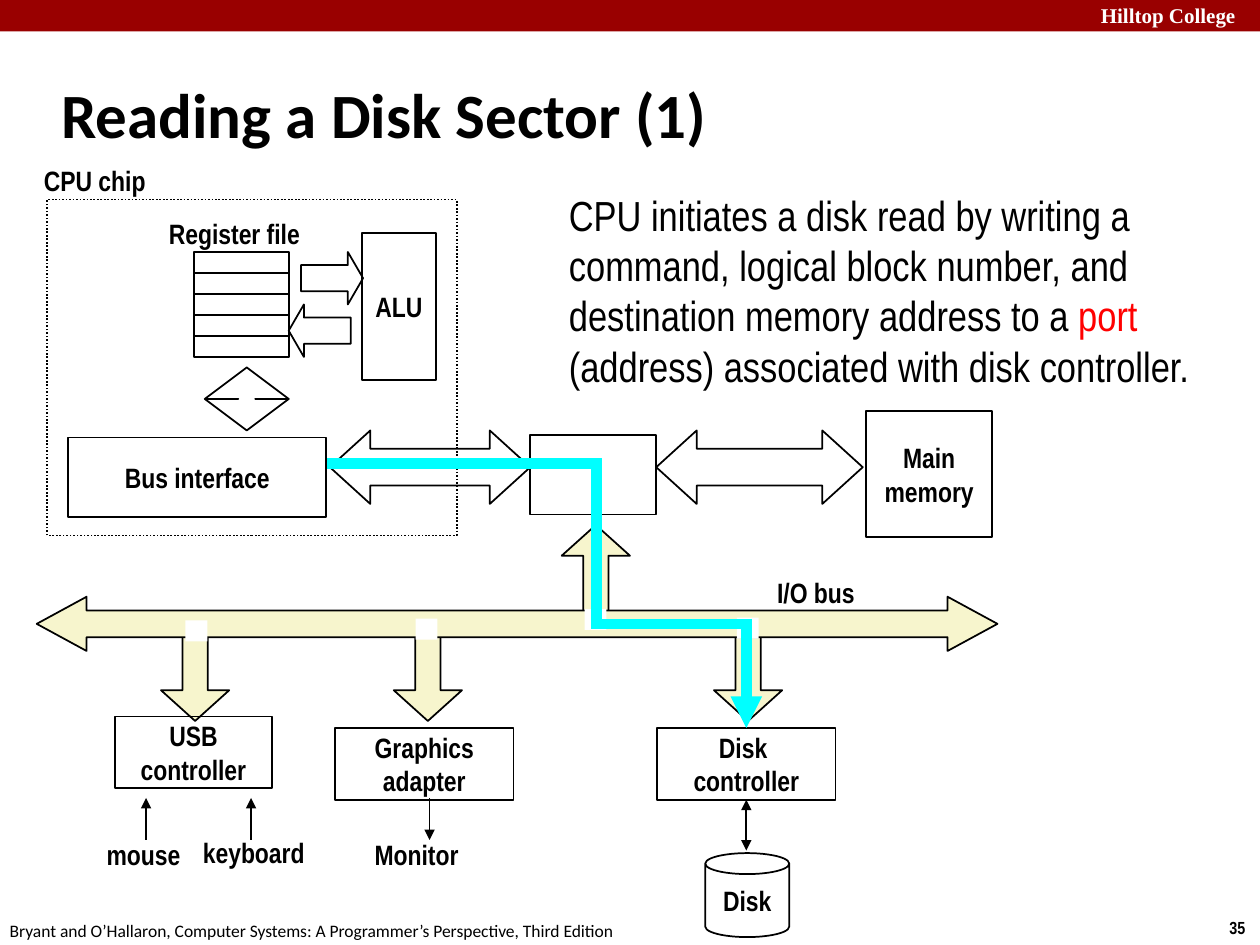
from pptx import Presentation
from pptx import util as u
from pptx.dml.color import RGBColor
from pptx.enum import dml, shapes, text
from pptx.oxml.ns import qn
from lxml import etree

BLACK, WHITE, RED, CYAN = "000000", "FFFFFF", "FF0000", "00FFFF"
HEADER_RED, BUS_CREAM = "990000", "F7F5CD"
KIND = shapes.MSO_SHAPE
LABEL = {"name": "Arial Narrow", "size": u.Pt(16), "bold": True}
CENTER, LEFT = text.PP_ALIGN.CENTER, text.PP_ALIGN.LEFT
MIDDLE, TOP = text.MSO_ANCHOR.MIDDLE, text.MSO_ANCHOR.TOP


def color(hex_value):
    return RGBColor.from_string(hex_value)


def points(*lengths):
    return [u.Pt(length) for length in lengths]


def write(shape, lines, font, align=CENTER, anchor=MIDDLE, wrap=False):
    """Fill a shape with paragraphs, each a list of (words, colour) runs."""
    frame = shape.text_frame
    frame.word_wrap = wrap
    frame.vertical_anchor = anchor
    for index, runs in enumerate(lines):
        paragraph = frame.add_paragraph() if index else frame.paragraphs[0]
        paragraph.alignment = align
        for words, hex_value in runs:
            run = paragraph.add_run()
            run.text = words
            for key, value in font.items():
                setattr(run.font, key, value)
            run.font.color.rgb = color(hex_value)


def add_figure(slide, kind, box, fill=None, line=BLACK, adjust=(), label=""):
    shape = slide.shapes.add_shape(kind, *points(*box))
    shape.shadow.inherit = False
    if fill:
        shape.fill.solid()
        shape.fill.fore_color.rgb = color(fill)
    else:
        shape.fill.background()
    if line:
        shape.line.color.rgb = color(line)
        shape.line.width = u.Pt(1)
    else:
        shape.line.fill.background()
    for index, value in enumerate(adjust):
        shape.adjustments[index] = value
    if label:
        write(shape, [[(words, BLACK)] for words in label.split("\n")], LABEL)
    return shape


def add_text(slide, box, runs, font=LABEL, **layout):
    write(slide.shapes.add_textbox(*points(*box)), [runs], font, **layout)


def add_line(slide, start, end, hex_value=BLACK, width=1, heads=()):
    """Draw a straight line; heads holds headEnd (start) and tailEnd (end)."""
    line = slide.shapes.add_connector(
        shapes.MSO_CONNECTOR.STRAIGHT, *points(*start, *end))
    line.line.color.rgb = color(hex_value)
    line.line.width = u.Pt(width)
    outline = line.line._get_or_add_ln()
    for head in heads:
        etree.SubElement(outline, qn("a:" + head), type="triangle")
    etree.SubElement(line._element.spPr, qn("a:effectLst"))
    return line


def add_frame_texts(slide):
    add_figure(slide, KIND.RECTANGLE, (0, 0, 720, 18), HEADER_RED, None)
    add_text(slide, (622, -2, 103, 22), [("Hilltop College", WHITE)],
             {"name": "Times New Roman", "size": u.Pt(12), "bold": True},
             align=LEFT, anchor=TOP, wrap=True)
    add_text(slide, (695.5, 520.5, 24.5, 19.5), [("35", BLACK)],
             {"name": "Arial Narrow", "size": u.Pt(10), "bold": True},
             align=LEFT, anchor=TOP)
    add_text(slide, (-1.5, 522, 366, 19.5),
             [("Bryant and O’Hallaron, Computer Systems: "
               "A Programmer’s Perspective, Third Edition", BLACK)],
             {"name": "Calibri", "size": u.Pt(10)}, align=LEFT, anchor=TOP)
    add_text(slide, (28, 34.5, 598, 60), [("Reading a Disk Sector (1)", BLACK)],
             {"name": "Calibri", "size": u.Pt(36), "bold": True},
             align=LEFT, wrap=True)


def add_cpu(slide):
    for row in range(5):
        add_figure(slide, KIND.RECTANGLE, (111, 144 + 12 * row, 54, 12))
    add_figure(slide, KIND.RIGHT_ARROW, (172, 144, 35.5, 30), adjust=(0.5, 0.29))
    add_figure(slide, KIND.LEFT_ARROW, (165, 174, 35.5, 30), adjust=(0.5, 0.29))
    add_figure(slide, KIND.RECTANGLE, (207, 133, 42, 84), label="ALU")
    add_text(slide, (88.5, 120, 91, 26.5), [("Register file", BLACK)])
    add_figure(slide, KIND.UP_DOWN_ARROW, (117, 210, 48, 36), adjust=(0.5, 0.2))
    chip = add_figure(slide, KIND.RECTANGLE, (27, 114, 234, 192))
    chip.line.dash_style = dml.MSO_LINE.ROUND_DOT
    add_text(slide, (18, 90, 86, 26.5), [("CPU chip", BLACK)], align=LEFT)


def add_memory_bus(slide):
    add_figure(slide, KIND.RECTANGLE, (495, 235, 72, 72), label="Main\nmemory")
    add_figure(slide, KIND.RECTANGLE, (303, 248.5, 72, 45.5))
    for left, width in ((188.5, 114.5), (375, 118)):
        add_figure(slide, KIND.LEFT_RIGHT_ARROW, (left, 246, width, 42),
                   adjust=(0.5, 0.55))


def add_io_bus(slide):
    """Draw the bus with its branches; return the disk controller."""
    branch = (0.37, 0.45)
    add_figure(slide, KIND.UP_ARROW, (321, 300, 39, 54), BUS_CREAM, adjust=branch)
    for left in (92, 225, 408):
        add_figure(slide, KIND.DOWN_ARROW, (left, 358, 39, 54), BUS_CREAM,
                   adjust=branch)
    add_figure(slide, KIND.RECTANGLE, (65.5, 409.5, 90, 41), label="USB\ncontroller")
    add_figure(slide, KIND.RECTANGLE, (191.5, 416, 102, 41),
               label="Graphics\nadapter")
    controller = add_figure(slide, KIND.RECTANGLE, (375.5, 416, 102, 41),
                            label="Disk \ncontroller")
    add_figure(slide, KIND.LEFT_RIGHT_ARROW, (21, 341, 549, 31), BUS_CREAM,
               adjust=(0.49, 0.92))
    for left, top in ((106, 354.5), (237.5, 353.5), (421, 353), (334, 348)):
        add_figure(slide, KIND.RECTANGLE, (left, top, 12.5, 12), WHITE, None)
    add_text(slide, (437, 325, 69, 26.5), [("I/O bus", BLACK)], align=LEFT)
    return controller


def add_devices(slide, controller):
    for x, head in ((83.5, "headEnd"), (143.5, "headEnd"), (245.5, "tailEnd")):
        add_line(slide, (x, 456), (x, 480), heads=[head])
    for words, box in (("mouse", (53, 475, 58, 26.5)),
                       ("keyboard", (108.5, 473.5, 73, 26.5)),
                       ("Monitor", (206.5, 475, 63, 26.5))):
        add_text(slide, box, [(words, BLACK)])
    link = add_line(slide, (426.5, 457), (426.5, 486),
                    heads=["headEnd", "tailEnd"])
    link.begin_connect(controller, 2)
    add_figure(slide, KIND.CAN, (403, 487.5, 48, 48), adjust=(0.25,), label="Disk")


def add_command_route(slide, controller):
    for start, end in (((186, 265), (344, 265)), ((341, 265), (341, 354)),
                       ((338, 356.5), (427, 356.5))):
        add_line(slide, start, end, CYAN, 6)
    last = add_line(slide, (426.5, 353.5), (426.5, 416), CYAN, 6, ["tailEnd"])
    last.end_connect(controller, 0)
    add_figure(slide, KIND.RECTANGLE, (39, 250, 147.5, 45.5), label="Bus interface")


def main():
    presentation = Presentation()
    presentation.slide_width, presentation.slide_height = points(720, 540)
    slide = presentation.slides.add_slide(presentation.slide_layouts[6])
    add_frame_texts(slide)
    add_memory_bus(slide)
    add_cpu(slide)
    controller = add_io_bus(slide)
    add_devices(slide, controller)
    add_command_route(slide, controller)
    add_text(slide, (318, 104.5, 384, 124),
             [("CPU initiates a disk read by writing a command, logical block "
               "number, and destination memory address to a ", BLACK),
              ("port ", RED),
              ("(address) associated with disk controller.", BLACK)],
             {"name": "Arial Narrow", "size": u.Pt(24)},
             align=LEFT, anchor=TOP, wrap=True)
    presentation.save("out.pptx")


if __name__ == "__main__":
    main()
